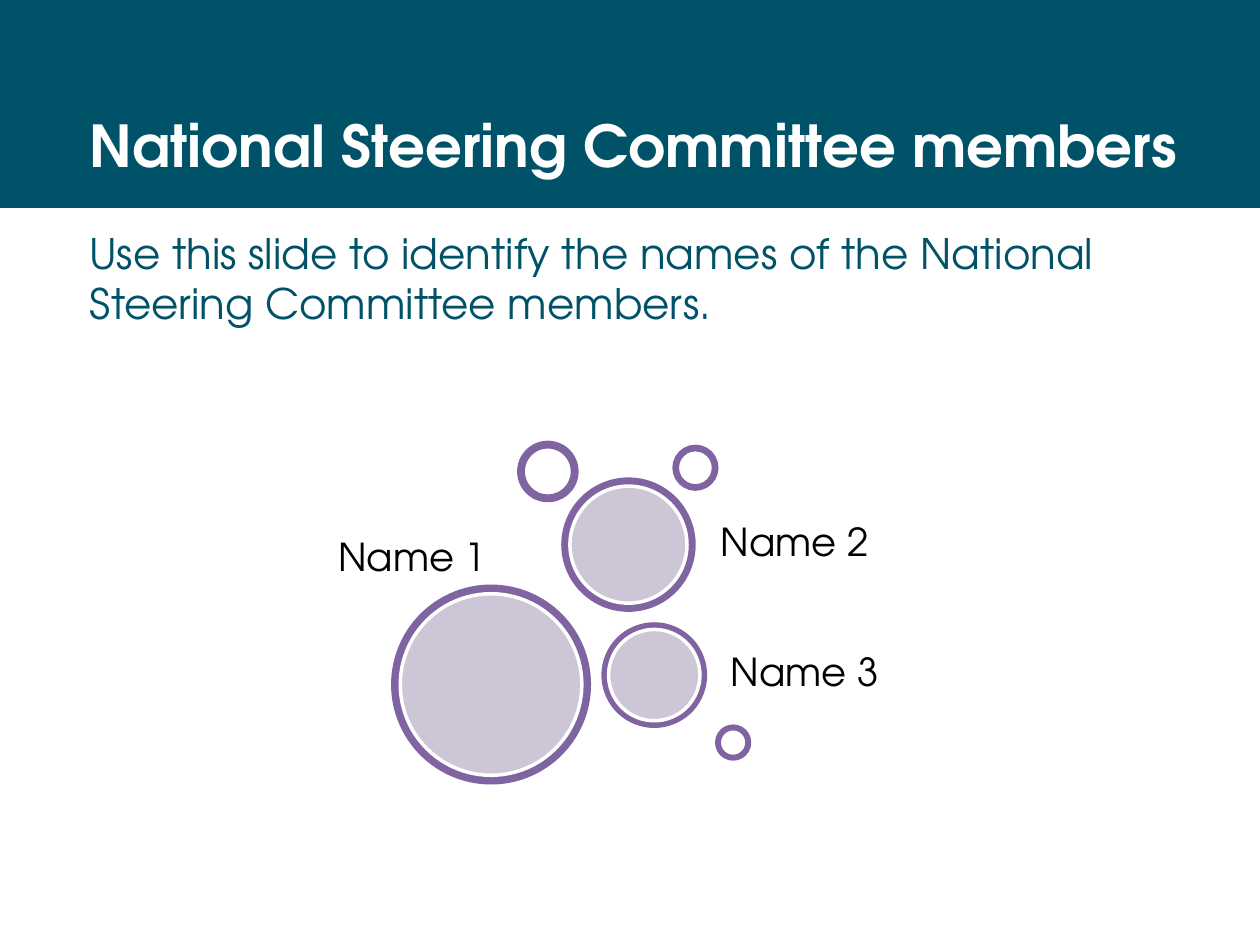
from pptx import Presentation
from pptx.dml.color import RGBColor
from pptx.enum import shapes, text
from pptx.util import Cm, Pt

FONT = "TeX Gyre Adventor"
TEAL, WHITE, BLACK = "005268", "FFFFFF", "000000"
PURPLE, LILAC = "8064A2", "CDC6D7"


def rgb(value):
    return RGBColor.from_string(value)


def place(sp, x, y, w, h):
    sp.left, sp.top, sp.width, sp.height = Cm(x), Cm(y), Cm(w), Cm(h)


def write(sp, words, size, color, bold=False, anchor=text.MSO_ANCHOR.TOP):
    tf = sp.text_frame
    tf.word_wrap = True
    tf.auto_size = text.MSO_AUTO_SIZE.NONE
    tf.vertical_anchor = anchor
    p = tf.paragraphs[0]
    p.text = words
    p.font.name, p.font.size, p.font.bold = FONT, Pt(size), bold
    p.font.color.rgb = rgb(color)
    p.alignment = text.PP_ALIGN.LEFT
    p.space_before = Pt(0)
    return p


def add_round(s, kind, x, y, d, fill, line):
    sp = s.shapes.add_shape(kind, Cm(x), Cm(y), Cm(d), Cm(d))
    sp.shadow.inherit = False
    sp.fill.solid()
    sp.fill.fore_color.rgb = rgb(fill)
    sp.line.color.rgb = rgb(line)
    sp.line.width = Pt(2)
    return sp


def add_header(s, x, y, w, h):
    # Band, sent behind the placeholders
    band = s.shapes.add_shape(shapes.MSO_SHAPE.RECTANGLE, Cm(x), Cm(y), Cm(w), Cm(h))
    band.shadow.inherit = False
    band.fill.solid()
    band.fill.fore_color.rgb = rgb(TEAL)
    band.line.fill.background()
    s.shapes._spTree.insert(2, band._element)
    # Title
    title = s.shapes.title
    place(title, x + 1.55, y + 1.04, 22.58, 2.79)
    write(title, "National Steering Committee members", 33, WHITE, True,
          text.MSO_ANCHOR.BOTTOM)


def add_intro(s, x, y, w, h):
    body = s.placeholders[1]
    place(body, x, y, w, h)
    p = write(body, "Use this slide to identify the names of the National "
              "Steering Committee members.", 24, TEAL)
    p.space_after = Pt(12)
    # No bullet or hanging indent
    pPr = p._p.get_or_add_pPr()
    pPr.set("marL", "0")
    pPr.set("indent", "0")
    bullet = pPr.makeelement(
        "{http://schemas.openxmlformats.org/drawingml/2006/main}buNone", {})
    pPr.insert_element_before(bullet, "a:tabLst", "a:defRPr", "a:extLst")


def add_members(s, x, y):
    # Discs: left, top, diameter, rim
    for dx, dy, d, rim in ((3.91, 2.9, 3.96, 0.15),
                           (7.34, 0.74, 2.64, 0.14),
                           (8.15, 3.66, 2.06, 0.11)):
        oval = shapes.MSO_SHAPE.OVAL
        add_round(s, oval, x + dx, y + dy, d, PURPLE, PURPLE)
        add_round(s, oval, x + dx + rim, y + dy + rim, d - 2 * rim, LILAC, WHITE)
    # Small rings: left, top, diameter
    for dx, dy, d in ((6.45, 0, 1.17), (9.58, 0.08, 0.86), (10.44, 5.72, 0.66)):
        ring = add_round(s, shapes.MSO_SHAPE.DONUT, x + dx, y + dy, d, PURPLE, PURPLE)
        ring.adjustments[0] = 0.075
    # Names: left, top, height, anchor, alignment
    middle, bottom = text.MSO_ANCHOR.MIDDLE, text.MSO_ANCHOR.BOTTOM
    left, right = text.PP_ALIGN.LEFT, text.PP_ALIGN.RIGHT
    for name, dx, dy, h, anchor, align in (
            ("Name 1", 0, 0.86, 1.91, bottom, right),
            ("Name 2", 10.44, 0.86, 2.36, middle, left),
            ("Name 3", 10.64, 3.76, 1.83, middle, left)):
        sp = s.shapes.add_textbox(Cm(x + dx), Cm(y + dy), Cm(5.87), Cm(h))
        p = write(sp, name, 22, BLACK, anchor=anchor)
        p.alignment = align
        p.line_spacing = 0.9
        tf = sp.text_frame
        tf.margin_left = tf.margin_right = tf.margin_top = Cm(0.08)
        tf.margin_bottom = Cm(0 if anchor == bottom else 0.08)


def main():
    prs = Presentation()
    prs.slide_width, prs.slide_height = Cm(25.4), Cm(19.05)
    s = prs.slides.add_slide(prs.slide_layouts[1])
    add_header(s, 0, -0.1, 25.4, 4.29)
    add_intro(s, 1.55, 4.45, 22.02, 2.11)
    add_members(s, 4.01, 8.92)
    prs.save("out.pptx")


if __name__ == "__main__":
    main()
